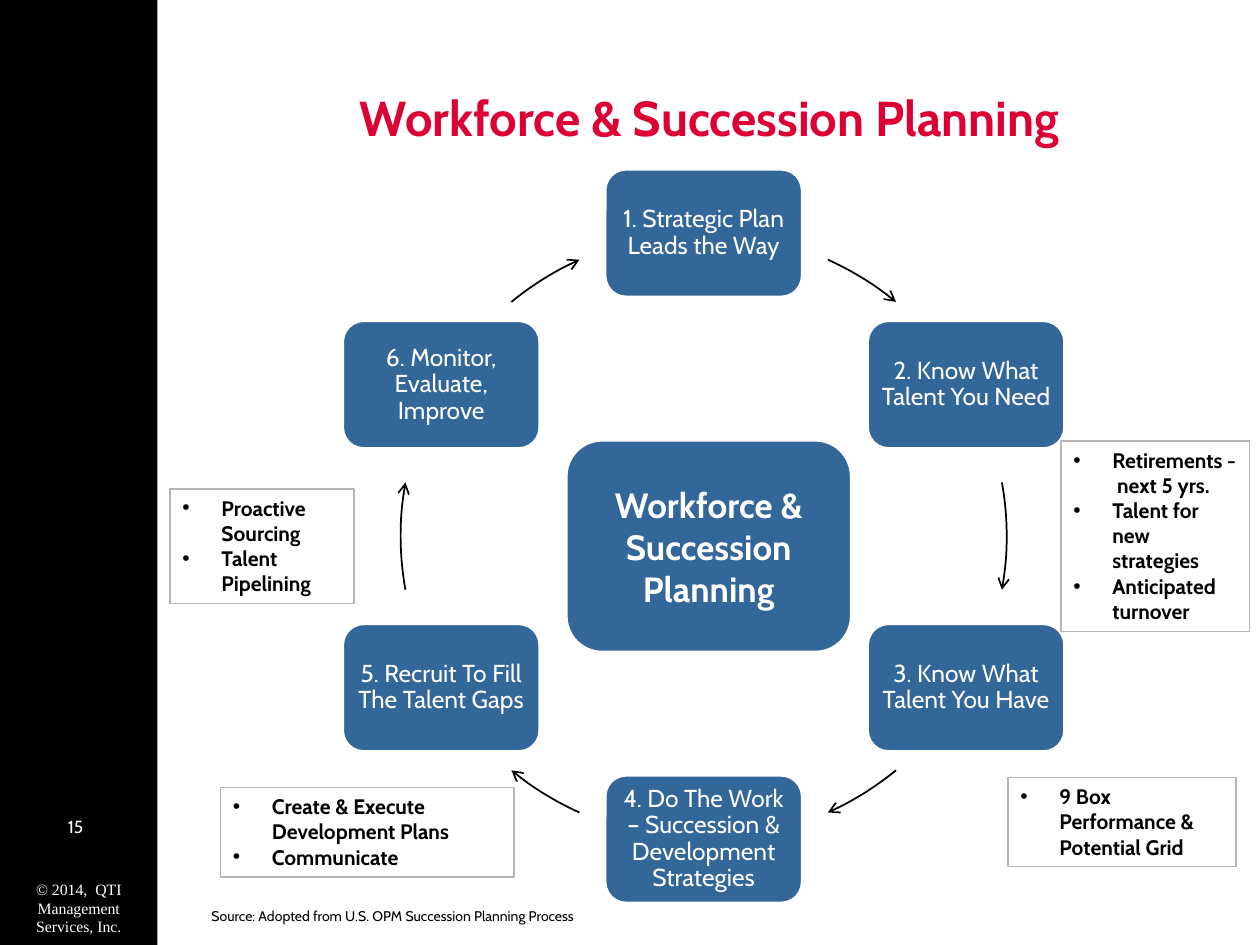
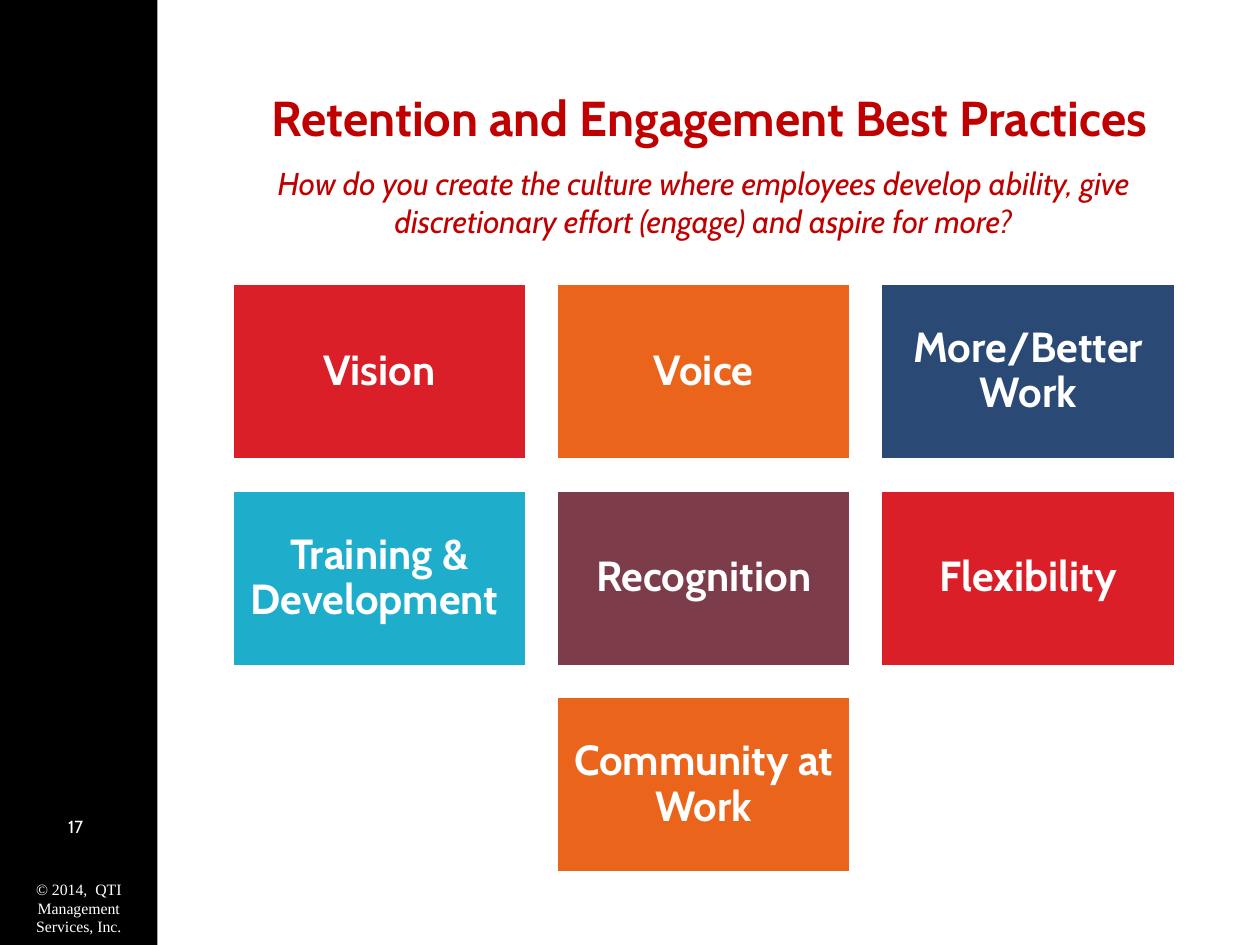
import math
from dataclasses import dataclass

import pptx
import pptx.dml.color
import pptx.enum.shapes
import pptx.enum.text
import pptx.oxml
import pptx.oxml.ns
import pptx.util

PX = 9144  # one px is a hundredth of an inch
COLORS = {
    "black": "000000",
    "white": "FFFFFF",
    "title red": "DC0034",
    "dark red": "C00000",
    "steel": "336699",
    "border": "B5B5B5",
    "red": "DA1F28",
    "orange": "EB641B",
    "navy": "2A4A75",
    "cyan": "1FADCC",
    "plum": "7D3C4A",
}
FONT = "Cabin"
PRESET = pptx.enum.shapes.MSO_SHAPE
ALIGN = pptx.enum.text.PP_ALIGN
ANCHOR = pptx.enum.text.MSO_ANCHOR
NAMESPACE = pptx.oxml.ns.nsdecls("a")


@dataclass(frozen=True)
class Box:
    left: float
    top: float
    width: float
    height: float

    def emu(self) -> list[int]:
        return [round(value * PX) for value in (self.left, self.top, self.width, self.height)]


@dataclass(frozen=True)
class Callout:
    box: Box
    items: str


@dataclass(frozen=True)
class Tile:
    text: str
    color: str


BAND = Box(0, 0, 125, 750)
PAGE_NUMBER = Box(-1, 643, 125, 33)
COPYRIGHT = Box(0, 693, 125, 56)
TITLE = Box(142, 30, 842, 125)

# Cycle of steps
RING = Box(318, 185, 481, 481)
STEP_WIDTH, STEP_HEIGHT = 157, 102
STEPS = [
    "1. Strategic Plan Leads the Way",
    "2. Know What Talent You Need",
    "3. Know What Talent You Have",
    "4. Do The Work – Succession & Development Strategies",
    "5. Recruit To Fill The Talent Gaps",
    "6. Monitor, Evaluate, Improve",
]
ARROW_ANGLES = [(24.2, 39.4), (79.8, 100.2), (140.6, 155.8)]  # clockwise from the top
CALLOUTS = [
    Callout(Box(842, 350, 150, 151),
            "Retirements -  next 5 yrs.\nTalent for new strategies\nAnticipated turnover"),
    Callout(Box(800, 617, 181, 71), "9 Box Performance & Potential Grid"),
    Callout(Box(175, 625, 233, 71), "Create & Execute Development Plans\nCommunicate"),
    Callout(Box(135, 388, 146, 91), "Proactive Sourcing\nTalent Pipelining"),
]

# Grid of practices
GRID = Box(184, 225, 749, 468)
COLUMNS, ROWS = 3, 3
TILE_WIDTH, TILE_HEIGHT = 234, 140
TILES = [
    Tile("Vision", "red"),
    Tile("Voice", "orange"),
    Tile("More/Better Work", "navy"),
    Tile("Training & Development ", "cyan"),
    Tile("Recognition", "plum"),
    Tile("Flexibility", "red"),
    Tile("Community at Work", "orange"),
]


def rgb(color: str) -> pptx.dml.color.RGBColor:
    return pptx.dml.color.RGBColor.from_string(COLORS[color])


def write(shape, text: str, *, size: int, color: str = "black", font: str = FONT,
          bold: bool = False, italic: bool = False, align=ALIGN.CENTER, anchor=ANCHOR.TOP,
          margin: int | None = None, spacing: float | None = None, bullet: bool = False) -> None:
    """Fill a shape with text, one paragraph per line."""
    frame = shape.text_frame
    frame.word_wrap = True
    frame.auto_size = pptx.enum.text.MSO_AUTO_SIZE.NONE
    frame.vertical_anchor = anchor
    if margin is not None:
        frame.margin_left = frame.margin_right = margin * PX
        frame.margin_top = frame.margin_bottom = margin * PX
    for index, line in enumerate(text.split("\n")):
        paragraph = frame.add_paragraph() if index else frame.paragraphs[0]
        paragraph.alignment = align
        if spacing:
            paragraph.line_spacing = spacing
        if bullet:
            add_bullet(paragraph)
        run = paragraph.add_run()
        run.text = line
        run.font.name = font
        run.font.size = pptx.util.Pt(size)
        run.font.bold = bold
        run.font.italic = italic
        run.font.color.rgb = rgb(color)


def add_bullet(paragraph, indent: int = 31) -> None:
    properties = paragraph._p.get_or_add_pPr()
    properties.set("marL", str(indent * PX))
    properties.set("indent", str(-indent * PX))
    for element in ('buFont {} typeface="Arial"', 'buChar {} char="•"'):
        properties.append(pptx.oxml.parse_xml(f"<a:{element.format(NAMESPACE)}/>"))


def add_text(slide, box: Box, text: str, **text_format) -> None:
    write(slide.shapes.add_textbox(*box.emu()), text, **text_format)


def add_block(slide, box: Box, preset=PRESET.RECTANGLE, *, fill: str | None = None,
              line: str | None = None, line_width: float | None = None):
    shape = slide.shapes.add_shape(preset, *box.emu())
    shape.shadow.inherit = False
    if fill:
        shape.fill.solid()
        shape.fill.fore_color.rgb = rgb(fill)
    else:
        shape.fill.background()
    if line:
        shape.line.color.rgb = rgb(line)
        if line_width:
            shape.line.width = pptx.util.Pt(line_width)
    else:
        shape.line.fill.background()
    return shape


def ring_point(angle: float) -> tuple[float, float]:
    """Point on the ring at an angle in degrees, clockwise from the top."""
    radius = RING.width / 2
    x = RING.left + radius + radius * math.sin(math.radians(angle))
    y = RING.top + radius - radius * math.cos(math.radians(angle))
    return x, y


def add_ring_arrow(slide, start: float, end: float) -> None:
    """Draw an arc of the ring in a freeform as large as the ring."""
    left, top, width, height = RING.emu()
    builder = slide.shapes.build_freeform(left, top)
    builder.add_line_segments([(left + width, top + height)], close=False)
    arrow = builder.convert_to_shape()

    # Replace the diagonal by a true arc
    path = arrow._element.find(".//" + pptx.oxml.ns.qn("a:path"))
    for segment in list(path):
        path.remove(segment)
    x, y = ring_point(start)
    first_angle = round((start - 90) % 360 * 60000)
    sweep = round((end - start) * 60000)
    path.append(pptx.oxml.parse_xml(
        f'<a:moveTo {NAMESPACE}><a:pt x="{round(x * PX) - left}" y="{round(y * PX) - top}"/>'
        f'</a:moveTo>'))
    path.append(pptx.oxml.parse_xml(
        f'<a:arcTo {NAMESPACE} wR="{width // 2}" hR="{height // 2}" '
        f'stAng="{first_angle}" swAng="{sweep}"/>'))

    arrow.shadow.inherit = False
    arrow.fill.background()
    arrow.line.color.rgb = rgb("black")
    arrow.line.width = pptx.util.Pt(1)
    head = pptx.oxml.parse_xml(f'<a:tailEnd {NAMESPACE} type="arrow"/>')
    arrow.line._get_or_add_ln().append(head)


def add_base_slide(presentation, title: str, title_color: str, number: int):
    """Add a slide with the side band, page number, copyright line and title."""
    slide = presentation.slides.add_slide(presentation.slide_layouts[5])
    add_block(slide, BAND, fill="black")
    add_text(slide, PAGE_NUMBER, f"{number} ", size=10, color="white")
    add_text(slide, COPYRIGHT, "© 2014,  QTI Management Services, Inc.",
             size=9, color="white", font="Times New Roman")
    heading = slide.shapes.title
    heading.left, heading.top, heading.width, heading.height = TITLE.emu()
    write(heading, title, size=28, color=title_color, bold=True, anchor=ANCHOR.MIDDLE)
    return slide


def build_planning_slide(presentation) -> None:
    name = "Workforce & Succession Planning"
    slide = add_base_slide(presentation, name, "title red", 15)

    # Steps around the ring
    for index, text in enumerate(STEPS):
        x, y = ring_point(index * 360 / len(STEPS))
        box = Box(x - STEP_WIDTH / 2, y - STEP_HEIGHT / 2, STEP_WIDTH, STEP_HEIGHT)
        step = add_block(slide, box, PRESET.ROUNDED_RECTANGLE,
                         fill="steel", line="white", line_width=2)
        write(step, text, size=14, color="white", anchor=ANCHOR.MIDDLE, margin=6, spacing=0.9)

    # Arrows: the right half repeats on the left, turned by half a circle
    for turn in (0, 180):
        for start, end in ARROW_ANGLES:
            add_ring_arrow(slide, start + turn, end + turn)

    # Centre and callouts
    centre = add_block(slide, Box(450, 350, 225, 167), PRESET.ROUNDED_RECTANGLE,
                       fill="steel", line="white")
    write(centre, name, size=20, color="white", bold=True, anchor=ANCHOR.MIDDLE)
    for callout in CALLOUTS:
        box = add_block(slide, callout.box, line="border")
        box.line.width = 0
        write(box, callout.items, size=12, bold=True, align=ALIGN.LEFT, bullet=True)
    add_text(slide, Box(158, 715, 767, 24),
             "Source: Adopted from U.S. OPM Succession Planning Process",
             size=8, align=ALIGN.LEFT)


def build_practices_slide(presentation) -> None:
    slide = add_base_slide(presentation, "Retention and Engagement Best Practices",
                           "dark red", 17)
    add_text(slide, Box(150, 125, 817, 71),
             "How do you create the culture where employees develop ability, "
             "give discretionary effort (engage) and aspire for more?",
             size=18, color="dark red", italic=True)

    # Tiles, each row centred in the grid
    column_pitch = (GRID.width - TILE_WIDTH) / (COLUMNS - 1)
    row_pitch = (GRID.height - TILE_HEIGHT) / (ROWS - 1)
    for row in range(ROWS):
        tiles = TILES[row * COLUMNS:(row + 1) * COLUMNS]
        left = GRID.left + (COLUMNS - len(tiles)) * column_pitch / 2
        for column, tile in enumerate(tiles):
            box = Box(left + column * column_pitch, GRID.top + row * row_pitch,
                      TILE_WIDTH, TILE_HEIGHT)
            shape = add_block(slide, box, fill=tile.color, line="white", line_width=2)
            write(shape, tile.text, size=24, color="white", bold=True,
                  anchor=ANCHOR.MIDDLE, margin=10, spacing=0.9)


def main() -> None:
    presentation = pptx.Presentation()
    presentation.slide_width = 1000 * PX
    presentation.slide_height = 750 * PX
    build_planning_slide(presentation)
    build_practices_slide(presentation)
    presentation.save("out.pptx")


if __name__ == "__main__":
    main()
